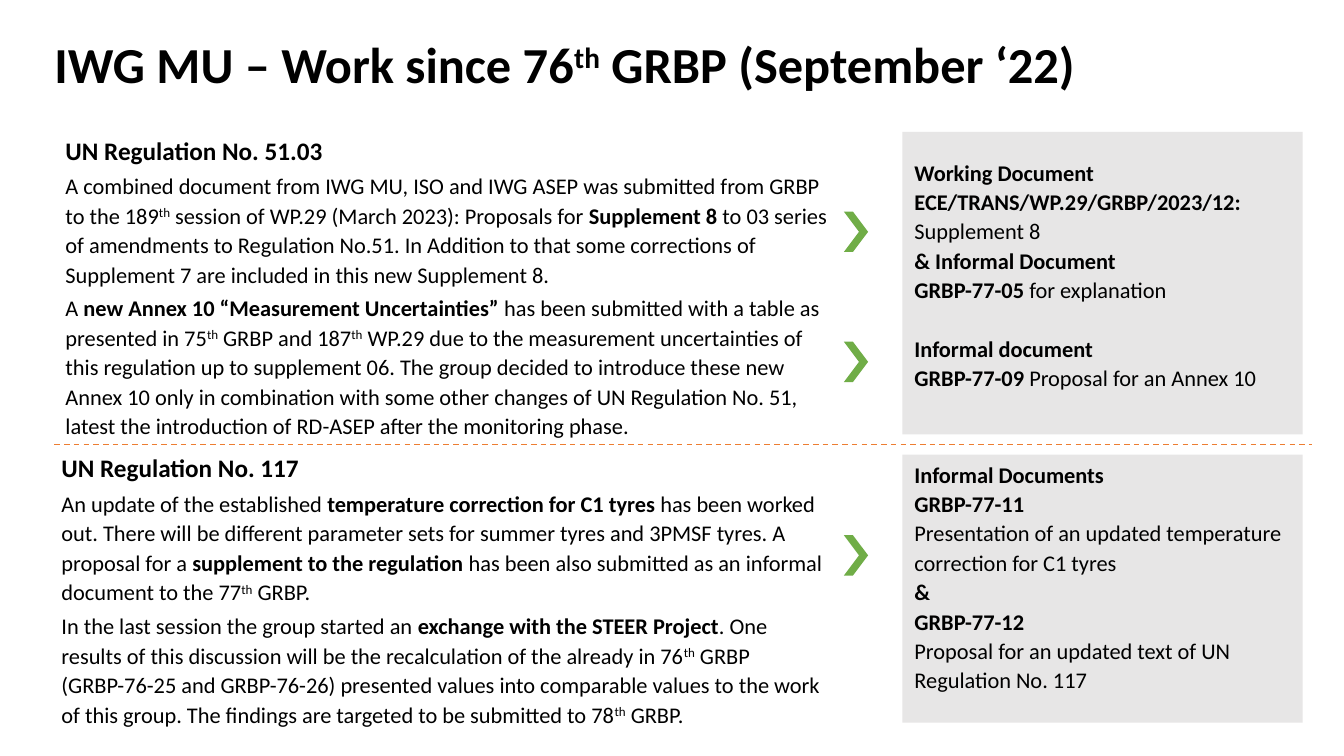
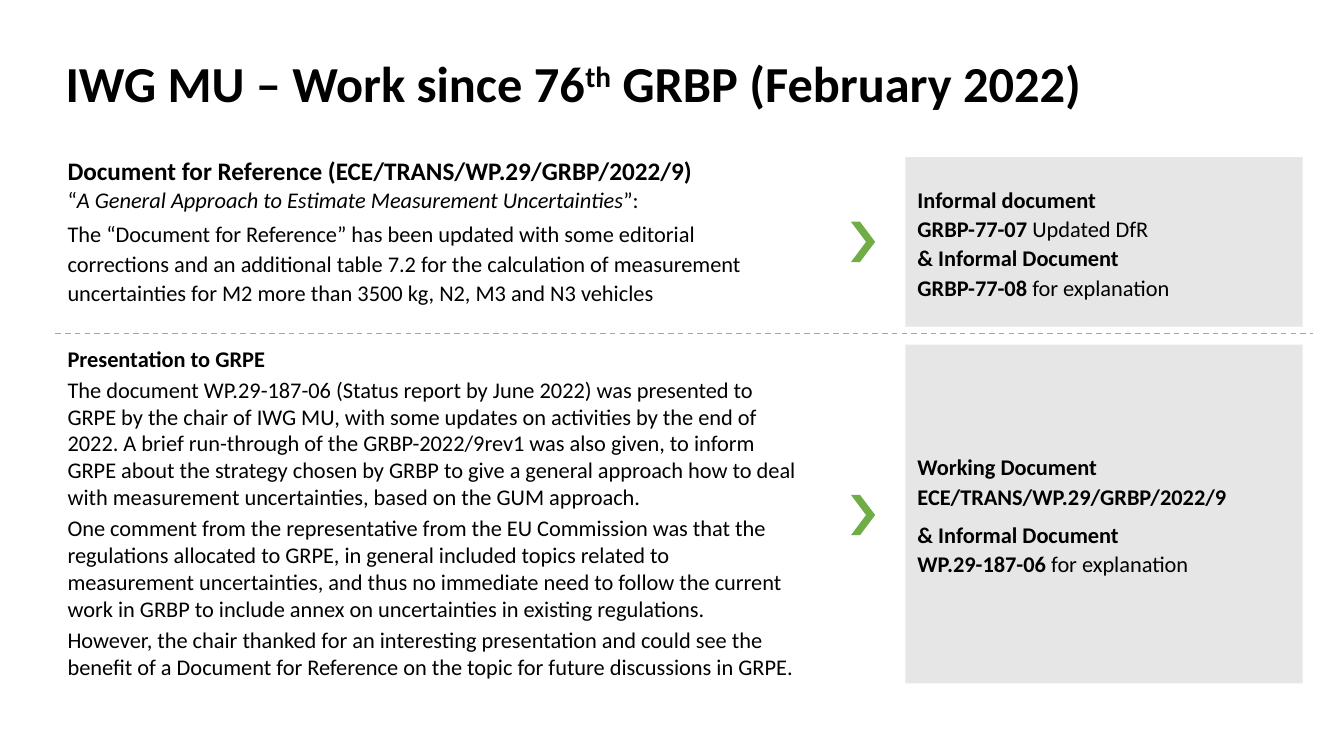
from dataclasses import dataclass
from typing import Any

from lxml import etree
from pptx import Presentation
from pptx.dml.color import RGBColor
from pptx.enum.dml import MSO_LINE
from pptx.enum.shapes import MSO_CONNECTOR, MSO_SHAPE
from pptx.enum.text import MSO_ANCHOR, MSO_AUTO_SIZE, PP_ALIGN
from pptx.oxml.ns import qn
from pptx.util import Inches, Length, Pt

TOP, MIDDLE, BOTTOM = MSO_ANCHOR.TOP, MSO_ANCHOR.MIDDLE, MSO_ANCHOR.BOTTOM
LEFT, FIXED = PP_ALIGN.LEFT, MSO_AUTO_SIZE.NONE
RECT, LINE, DASH = MSO_SHAPE.RECTANGLE, MSO_CONNECTOR.STRAIGHT, MSO_LINE.DASH

Spot = tuple[float, float, float, float]


@dataclass(frozen=True)
class Theme:
    font: str = "Calibri"
    ink: RGBColor = RGBColor(0, 0, 0)
    panel: RGBColor = RGBColor(0xE7, 0xE6, 0xE6)
    green: RGBColor = RGBColor(0x70, 0xAD, 0x47)
    orange: RGBColor = RGBColor(0xED, 0x7D, 0x31)
    gray: RGBColor = RGBColor(0xA5, 0xA5, 0xA5)
    title: int = 36
    head: int = 18
    body: int = 16


THEME = Theme()
CHEVRON = ((0.09, 0), (0.24, 0.2), (0.09, 0.4), (0, 0.4), (0.15, 0.2))
FLAGS = {"*": "bold", "_": "italic", "^": "raised"}


@dataclass(frozen=True)
class Para:
    text: str
    size: int = THEME.body
    lead: float | Length = 1.1
    gap: float = 3


@dataclass(frozen=True)
class Block:
    at: Spot
    paras: list[Para]
    anchor: Any = TOP
    inset: Spot = (0, 0, 0, 0)
    fill: RGBColor | None = None


@dataclass(frozen=True)
class Page:
    title: str
    at: Spot
    arrows: list[tuple[float, float]]
    rule: tuple[float, float, float]
    tint: RGBColor
    blocks: list[Block]


def tight(*texts: str) -> list[Para]:
    return [Para(text, lead=Pt(21), gap=0) for text in texts]


def apply(item: Any, form: dict[str, Any]) -> None:
    for name, value in form.items():
        setattr(item, name, value)


def place(at: Spot) -> list[Length]:
    return [Inches(value) for value in at]


def write(para: Any, text: str, size: int) -> None:
    state = dict.fromkeys(FLAGS.values(), False)
    part = ""
    for char in text + "\0":
        if char not in FLAGS and char != "\0":
            part += char
            continue
        if part:
            run = para.add_run()
            run.text = part
            apply(run.font, {"name": THEME.font, "size": Pt(size),
                             "bold": state["bold"], "italic": state["italic"]})
            run.font.color.rgb = THEME.ink
            if state["raised"]:
                run.font._element.set("baseline", "30000")
            part = ""
        if char in FLAGS:
            state[FLAGS[char]] = not state[FLAGS[char]]


def fill_text(frame: Any, block: Block) -> None:
    sides = ("margin_left", "margin_top", "margin_right", "margin_bottom")
    apply(frame, {"word_wrap": True, "auto_size": FIXED,
                  "vertical_anchor": block.anchor,
                  **dict(zip(sides, place(block.inset)))})
    for index, item in enumerate(block.paras):
        para = frame.add_paragraph() if index else frame.paragraphs[0]
        apply(para, {"alignment": LEFT, "line_spacing": item.lead,
                     "space_before": Pt(item.gap if index else 0),
                     "space_after": Pt(0)})
        write(para, item.text, item.size)


def paint(shape: Any, color: RGBColor) -> None:
    shape.shadow.inherit = False
    shape.fill.solid()
    shape.fill.fore_color.rgb = color
    shape.line.fill.background()


def draw_block(slide: Any, block: Block) -> None:
    spot = place(block.at)
    if block.fill is None:
        shape = slide.shapes.add_textbox(*spot)
    else:
        shape = slide.shapes.add_shape(RECT, *spot)
        paint(shape, block.fill)
    fill_text(shape.text_frame, block)


def draw_arrow(slide: Any, left: float, top: float) -> None:
    build = slide.shapes.build_freeform(Inches(left), Inches(top))
    build.add_line_segments([(Inches(left + x), Inches(top + y))
                             for x, y in CHEVRON], close=True)
    paint(build.convert_to_shape(), THEME.green)


def draw_rule(slide: Any, start: float, end: float, y: float, tint: RGBColor) -> None:
    rule = slide.shapes.add_connector(LINE, *place((start, y, end, y)))
    rule.line.color.rgb = tint
    apply(rule.line, {"width": Pt(1), "dash_style": DASH})
    etree.SubElement(rule._element.spPr, qn("a:effectLst"))


def draw_page(deck: Any, page: Page) -> None:
    slide = deck.slides.add_slide(deck.slide_layouts[5])
    title = slide.shapes.title
    apply(title, dict(zip(("left", "top", "width", "height"), place(page.at))))
    fill_text(title.text_frame, Block(
        page.at, [Para(f"*{page.title}*", THEME.title, 0.9)],
        MIDDLE, (0.1, 0.05, 0.1, 0.05)))
    for block in page.blocks:
        draw_block(slide, block)
    for arrow in page.arrows:
        draw_arrow(slide, *arrow)
    draw_rule(slide, *page.rule, page.tint)


PAGES = [
    Page(
        "IWG MU – Work since 76^th^ GRBP (September ‘22)",
        (0.44, -0.06, 12.35, 1.45),
        [(8.37, 2.1), (8.37, 3.39), (8.37, 5.31)],
        (0.54, 13.01, 4.41), THEME.orange,
        [
            Block((0.65, 1.31, 7.66, 3.08), [
                Para("*UN Regulation No. 51.03*", THEME.head),
                Para("A combined document from IWG MU, ISO and IWG ASEP was "
                     "submitted from GRBP to the 189^th^ session of WP.29 "
                     "(March 2023): Proposals for *Supplement 8* to 03 series "
                     "of amendments to Regulation No.51. In Addition to that "
                     "some corrections of Supplement 7 are included in this "
                     "new Supplement 8."),
                Para("A *new Annex 10 “Measurement Uncertainties” *has been "
                     "submitted with a table as presented in 75^th^ GRBP and "
                     "187^th^ WP.29 due to the measurement uncertainties of "
                     "this regulation up to supplement 06. The group decided "
                     "to introduce these new Annex 10 only in combination with "
                     "some other changes of UN Regulation No. 51, latest the "
                     "introduction of RD-ASEP after the monitoring phase."),
            ]),
            Block((0.61, 4.51, 7.57, 2.66), [
                Para("*UN Regulation No. 117*", THEME.head),
                Para("An update of the established *temperature correction for "
                     "C1 tyres *has been worked out. There will be different "
                     "parameter sets for summer tyres and 3PMSF tyres. A "
                     "proposal for a *supplement to the regulation *has been "
                     "also submitted as an informal document to the 77^th^ "
                     "GRBP."),
                Para("In the last session the group started an *exchange with "
                     "the STEER Project*. One results of this discussion will "
                     "be the recalculation of the already in 76^th^ GRBP "
                     "(GRBP-76-25 and GRBP-76-26) presented values into "
                     "comparable values to the work of this group. The "
                     "findings are targeted to be submitted to 78^th^ GRBP."),
            ], MIDDLE),
            Block((8.95, 1.31, 3.97, 3), [
                *tight("*Working Document ECE/TRANS/WP.29/GRBP/2023/12:*",
                       "Supplement 8",
                       "*& Informal Document*",
                       "*GRBP-77-05 *for explanation"),
                Para("*Informal document*", lead=Pt(21), gap=21),
                *tight("*GRBP-77-09 *Proposal for an Annex 10"),
            ], TOP, (0.12, 0.24, 0.12, 0.08), THEME.panel),
            Block((8.95, 4.51, 3.97, 2.66), tight(
                "*Informal Documents*",
                "*GRBP-77-11*",
                "Presentation of an updated temperature correction for C1 tyres",
                "*&*",
                "*GRBP-77-12*",
                "Proposal for an updated text of UN Regulation No. 117",
            ), BOTTOM, (0.12, 0.08, 0.12, 0.29), THEME.panel),
        ],
    ),
    Page(
        "IWG MU – Work since 76^th^ GRBP (February 2022)",
        (0.55, 0.18, 11.88, 1.35),
        [(8.44, 2.2), (8.44, 4.91)],
        (0.55, 13.02, 3.31), THEME.gray,
        [
            Block((0.67, 1.56, 7.13, 1.84), [
                Para("*Document for Reference (ECE/TRANS/WP.29/GRBP/2022/9)*",
                     THEME.head, Pt(20)),
                Para("“_A General Approach to Estimate Measurement "
                     "Uncertainties_”:", lead=Pt(20), gap=0),
                Para("The “Document for Reference” has been updated with some "
                     "editorial corrections and an additional table 7.2 for "
                     "the calculation of measurement uncertainties for M2 more "
                     "than 3500 kg, N2, M3 and N3 vehicles"),
            ]),
            Block((0.67, 3.42, 7.25, 3.37), [Para(text, lead=1.0) for text in (
                "*Presentation to GRPE*",
                "The document WP.29-187-06 (Status report by June 2022) was "
                "presented to GRPE by the chair of IWG MU, with some updates "
                "on activities by the end of 2022. A brief run-through of the "
                "GRBP-2022/9rev1 was also given, to inform GRPE about the "
                "strategy chosen by GRBP to give a general approach how to "
                "deal with measurement uncertainties, based on the GUM "
                "approach.",
                "One comment from the representative from the EU Commission "
                "was that the regulations allocated to GRPE, in general "
                "included topics related to measurement uncertainties, and "
                "thus no immediate need to follow the current work in GRBP to "
                "include annex on uncertainties in existing regulations.",
                "However, the chair thanked for an interesting presentation "
                "and could see the benefit of a Document for Reference on the "
                "topic for future discussions in GRPE.",
            )]),
            Block((8.98, 1.56, 3.94, 1.68), tight(
                "*Informal document*",
                "*GRBP-77-07 *Updated DfR",
                "*& Informal Document*",
                "*GRBP-77-08 *for explanation",
            ), MIDDLE, (0.12, 0.08, 0.12, 0.08), THEME.panel),
            Block((8.98, 3.42, 3.94, 3.36), [
                Para("*Working Document*"),
                Para("*ECE/TRANS/WP.29/GRBP/2022/9*", gap=0),
                Para("*& Informal Document*", gap=6),
                Para("*WP.29-187-06 *for explanation", gap=0),
            ], MIDDLE, (0.12, 0.08, 0.12, 0.08), THEME.panel),
        ],
    ),
]


def main() -> None:
    deck = Presentation()
    apply(deck, {"slide_width": Inches(13.33), "slide_height": Inches(7.5)})
    for page in PAGES:
        draw_page(deck, page)
    deck.save("out.pptx")


if __name__ == "__main__":
    main()
